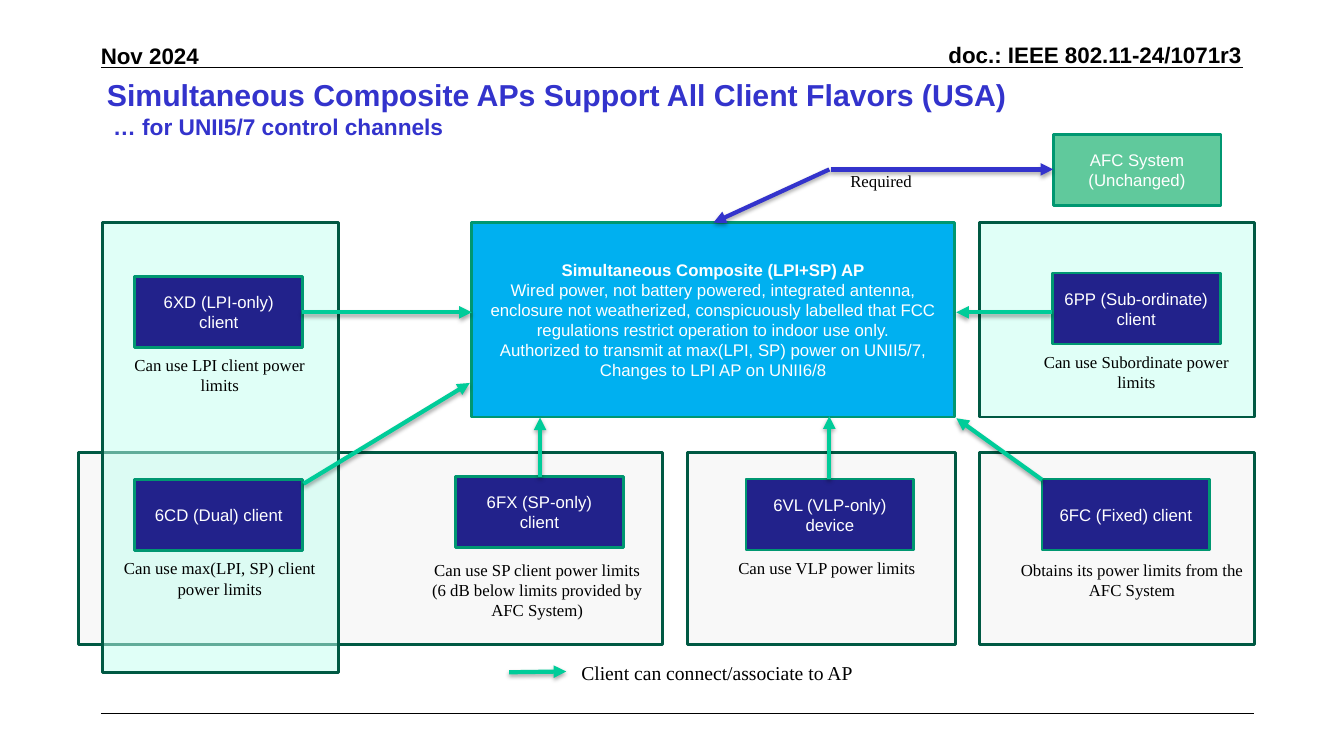
"""Builds the slide on composite access points and the client types they support."""
from dataclasses import dataclass

from lxml import etree
from pptx import Presentation
from pptx.dml.color import RGBColor
from pptx.enum.shapes import MSO_CONNECTOR, MSO_SHAPE
from pptx.enum.text import MSO_ANCHOR, MSO_AUTO_SIZE, PP_ALIGN
from pptx.oxml.ns import qn
from pptx.util import Cm, Pt

STRAIGHT = MSO_CONNECTOR.STRAIGHT
RECTANGLE = MSO_SHAPE.RECTANGLE
TOP, MIDDLE = MSO_ANCHOR.TOP, MSO_ANCHOR.MIDDLE
NO_FIT = MSO_AUTO_SIZE.NONE
LEFT, CENTER, RIGHT = PP_ALIGN.LEFT, PP_ALIGN.CENTER, PP_ALIGN.RIGHT


@dataclass(frozen=True)
class Theme:
    sans: str = "Arial"
    serif: str = "Times New Roman"
    black: str = "000000"
    white: str = "FFFFFF"
    title: str = "3333CC"
    link: str = "00CC99"
    device: str = "22228B"
    device_edge: str = "009771"
    access_point: str = "00B0F0"
    afc: str = "60C99C"
    panel_edge: str = "005943"
    grey_panel: str = "F2F2F2"
    mint_panel: str = "C2FFF0"
    title_size: float = 21.6
    subtitle_size: float = 16.2
    header_size: float = 16
    legend_size: float = 14
    body_size: float = 12


class SlideBuilder:
    def __init__(self, page, theme):
        self.page = page
        self.theme = theme

    def style(self, font, size, color, name, bold=False):
        font.size, font.name, font.bold = Pt(size), name, bold
        font.color.rgb = RGBColor.from_string(color)

    def title(self, heading, subheading, left, top, width, height):
        theme = self.theme
        box = self.page.shapes.title
        box.left, box.top, box.width, box.height = map(Cm, (left, top, width, height))
        frame = box.text_frame
        frame.vertical_anchor, frame.auto_size = TOP, NO_FIT
        para = frame.paragraphs[0]
        para.alignment = LEFT
        self.style(para.font, theme.title_size, theme.title, theme.sans, True)
        para.add_run().text = heading
        para.add_line_break()
        span = para.add_run()
        span.text = subheading
        span.font.size = Pt(theme.subtitle_size)

    def text(self, words, left, top, width, height, align=CENTER, size=None):
        box = self.page.shapes.add_textbox(*map(Cm, (left, top, width, height)))
        box.text_frame.word_wrap = True
        para = box.text_frame.paragraphs[0]
        para.text, para.alignment = words, align
        self.style(para.font, size or self.theme.body_size, self.theme.black, self.theme.serif)
        return box

    def header(self, words, left, top, width, align):
        box = self.text(words, left, top, width, 0.69, align)
        frame = box.text_frame
        frame.margin_left = frame.margin_right = frame.margin_top = frame.margin_bottom = 0
        frame.word_wrap = False
        theme = self.theme
        self.style(frame.paragraphs[0].font, theme.header_size, theme.black, theme.sans, True)

    def rectangle(self, left, top, width, height, fill, edge):
        box = self.page.shapes.add_shape(RECTANGLE, *map(Cm, (left, top, width, height)))
        box.shadow.inherit = False
        box.fill.solid()
        box.fill.fore_color.rgb = RGBColor.from_string(fill)
        box.line.color.rgb = RGBColor.from_string(edge)
        box.line.width = Pt(2)
        return box

    def panel(self, left, top, width, height, fill):
        box = self.rectangle(left, top, width, height, fill, self.theme.panel_edge)
        color = box.element.spPr.find(qn("a:solidFill"))[0]
        etree.SubElement(color, qn("a:alpha"), val="50000")

    def block(self, lines, left, top, width, height, fill, bold_first=False):
        box = self.rectangle(left, top, width, height, fill, self.theme.device_edge)
        frame = box.text_frame
        frame.word_wrap, frame.vertical_anchor = True, MIDDLE
        for index, words in enumerate(lines):
            para = frame.add_paragraph() if index else frame.paragraphs[0]
            para.text, para.alignment = words, CENTER
            self.style(para.font, self.theme.body_size, self.theme.white, self.theme.sans,
                       bold_first and index == 0)

    def line(self, points, color, width):
        rule = self.page.shapes.add_connector(STRAIGHT, *map(Cm, points))
        rule.line.color.rgb = RGBColor.from_string(color)
        rule.line.width = Pt(width)
        effects = etree.SubElement(rule.element.spPr, qn("a:effectLst"))
        return rule, effects

    def arrow(self, points, color):
        rule, effects = self.line(points, color, 3)
        etree.SubElement(rule.element.spPr.find(qn("a:ln")), qn("a:tailEnd"), type="triangle")
        shadow = etree.SubElement(effects, qn("a:outerShdw"), blurRad=str(Pt(3.1)),
                                  dist=str(Pt(1.8)), dir="5400000", rotWithShape="0")
        shade = etree.SubElement(shadow, qn("a:srgbClr"), val=self.theme.black)
        etree.SubElement(shade, qn("a:alpha"), val="35000")


UPPER, LOWER = 5.61, 11.4
UPPER_HEIGHT, LOWER_HEIGHT = 4.9, 4.84
DEVICE_SIZE = (4.23, 1.79)
CAPTION_HEIGHT = 1.57

CLIENTS = [
    ("6XD (LPI-only) client", 3.4, 6.96,
     "Can use LPI client power limits", 2.77, 8.81, 5.54),
    ("6CD (Dual) client", 3.4, 12.09,
     "Can use max(LPI, SP) client power limits", 2.67, 13.94, 5.74),
    ("6FX (SP-only) client", 11.48, 12.01,
     "Can use SP client power limits (6 dB below limits provided by AFC System)",
     10.57, 13.97, 5.94),
    ("6VL (VLP-only) device", 18.8, 12.07,
     "Can use VLP power limits", 17.93, 13.92, 5.82),
    ("6FC (Fixed) client", 26.26, 12.07,
     "Obtains its power limits from the AFC System", 25.43, 13.97, 6.2),
    ("6PP (Sub-ordinate) client", 26.52, 6.88,
     "Can use Subordinate power limits", 25.68, 8.74, 5.92),
]

CLIENT_ARROWS = [
    (7.62, 7.87, 11.89, 7.87),
    (7.65, 12.19, 11.84, 9.65),
    (13.61, 12.01, 13.61, 10.52),
    (20.9, 12.07, 20.9, 10.49),
    (26.26, 12.09, 24.1, 10.54),
    (26.52, 7.87, 24.1, 7.87),
    (12.83, 16.94, 14.27, 16.92),
]

AFC_ARROWS = [(20.9, 4.27, 17.98, UPPER), (20.93, 4.27, 26.54, 4.27)]

ACCESS_POINT = [
    "Simultaneous Composite (LPI+SP) AP",
    "Wired power, not battery powered, integrated antenna, enclosure not weatherized, "
    "conspicuously labelled that FCC regulations restrict operation to indoor use only.",
    "Authorized to transmit at max(LPI, SP) power on UNII5/7,\vChanges to LPI AP on UNII6/8",
]


def main():
    deck = Presentation()
    deck.slide_width, deck.slide_height = Cm(33.87), Cm(19.05)
    theme = Theme()
    slide = SlideBuilder(deck.slides.add_slide(deck.slide_layouts[5]), theme)

    slide.header("doc.: IEEE 802.11-24/1071r3", 22.53, 1.04, 8.76, RIGHT)
    slide.header("Nov 2024", 2.54, 1.07, 2.49, LEFT)
    for right, height in ((31.32, 1.7), (31.6, 17.98)):
        slide.line((2.54, height, right, height), theme.black, 1)
    slide.title("Simultaneous Composite APs Support All Client Flavors (USA)",
                " … for UNII5/7 control channels", 2.44, 1.8, 24.08, 1.9)

    for left, width in ((17.32, 6.76), (24.69, 6.93), (1.98, 14.71)):
        slide.panel(left, LOWER, width, LOWER_HEIGHT, theme.grey_panel)
    slide.panel(24.69, UPPER, 6.93, UPPER_HEIGHT, theme.mint_panel)
    slide.panel(2.59, UPPER, 5.94, 11.33, theme.mint_panel)

    slide.block(ACCESS_POINT, 11.89, UPPER, 12.17, UPPER_HEIGHT, theme.access_point, True)
    slide.block(["AFC System", "(Unchanged)"], 26.54, 3.38, *DEVICE_SIZE, theme.afc)
    for name, left, top, caption, caption_left, caption_top, caption_width in CLIENTS:
        slide.block([name], left, top, *DEVICE_SIZE, theme.device)
        slide.text(caption, caption_left, caption_top, caption_width, CAPTION_HEIGHT)

    for points in CLIENT_ARROWS:
        slide.arrow(points, theme.link)
    for points in AFC_ARROWS:
        slide.arrow(points, theme.title)
    slide.text("Required", 20.35, 4.17, 3.71, 0.89)
    slide.text("Client can connect/associate to AP", 14.4, 16.54, 8.69, 0.74,
               LEFT, theme.legend_size)
    deck.save("out.pptx")


if __name__ == "__main__":
    main()
